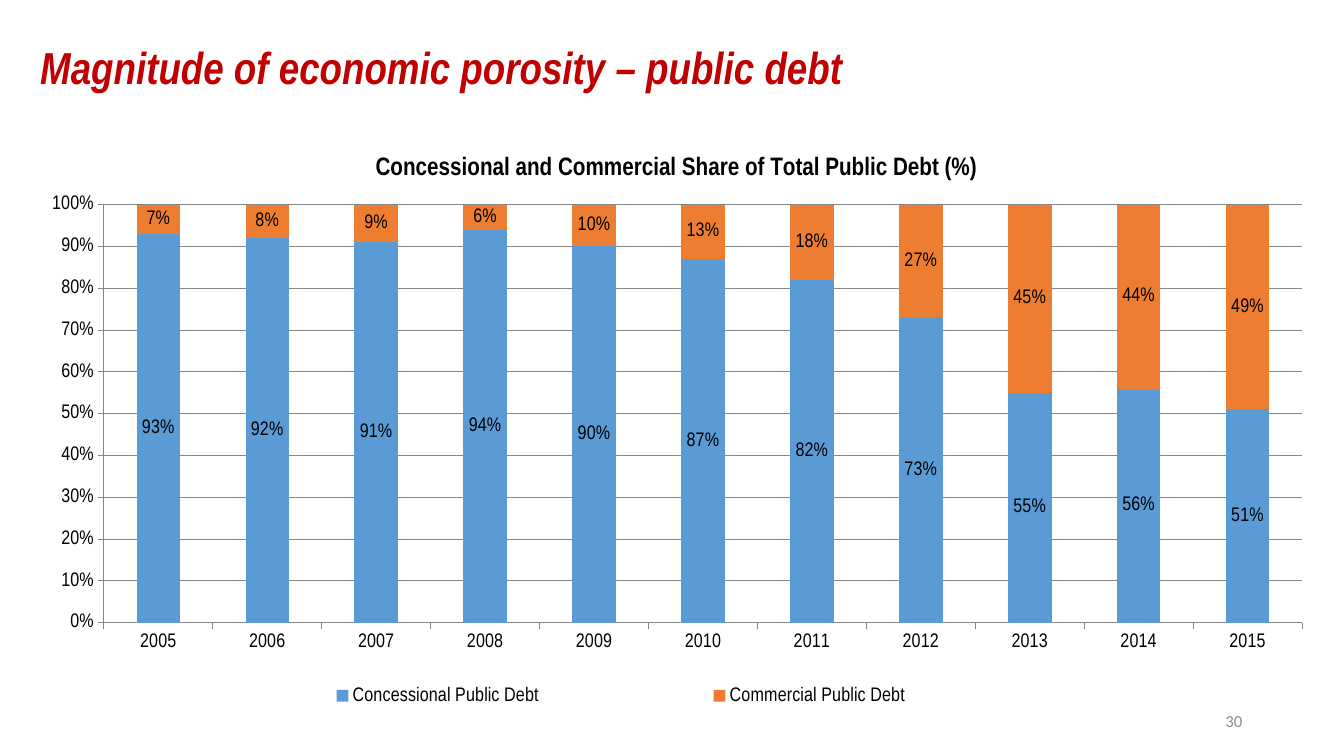
from dataclasses import dataclass

from lxml import etree
from pptx import Presentation
from pptx.chart.data import CategoryChartData
from pptx.dml.color import RGBColor
from pptx.enum.chart import XL_CHART_TYPE as ChartType, XL_LABEL_POSITION as LabelPosition
from pptx.enum.chart import XL_LEGEND_POSITION as LegendPosition, XL_TICK_MARK as TickMark
from pptx.enum.text import MSO_ANCHOR as Anchor, PP_ALIGN as Align
from pptx.oxml.ns import qn
from pptx.util import Inches, Pt


@dataclass(frozen=True)
class Theme:
    font: str = "Arial Narrow"
    number_font: str = "Calibri"
    heading: str = "C00000"
    ink: str = "000000"
    muted: str = "8C8C8C"
    rule: str = "868686"
    concessional: str = "5B9BD5"
    commercial: str = "ED7D31"
    heading_size: int = 32
    chart_title_size: int = 18
    chart_size: int = 14
    number_size: int = 12


THEME = Theme()

YEARS = [str(year) for year in range(2005, 2016)]
CONCESSIONAL_SHARES = [93, 92, 91, 94, 90, 87, 82, 73, 55, 56, 51]
DEBT_SHARES = {
    "Concessional Public Debt": (CONCESSIONAL_SHARES, THEME.concessional),
    "Commercial Public Debt": ([100 - share for share in CONCESSIONAL_SHARES], THEME.commercial),
}


def style_font(font, name, size, color, **formats):
    font.color.rgb = RGBColor.from_string(color)
    for attribute, value in {"name": name, "size": Pt(size), **formats}.items():
        setattr(font, attribute, value)


def add_text(slide, box, words, align=Align.LEFT, spacing=1.0, **font_style):
    """Place one line of text, centred vertically in its box."""
    frame = slide.shapes.add_textbox(*map(Inches, box)).text_frame
    frame.word_wrap = True
    frame.vertical_anchor = Anchor.MIDDLE
    line = frame.paragraphs[0]
    line.alignment = align
    line.line_spacing = spacing
    run = line.add_run()
    run.text = words
    style_font(run.font, **font_style)


def set_layout(parent, before, x, y, w, h, inner=False):
    """Fix a chart part at fractions of the chart area."""
    for old in parent.findall(qn("c:layout")):
        parent.remove(old)
    layout = etree.Element(qn("c:layout"))
    manual = etree.SubElement(layout, qn("c:manualLayout"))
    entries = {"xMode": "edge", "yMode": "edge", "x": x, "y": y, "w": w, "h": h}
    if inner:
        entries = {"layoutTarget": "inner", **entries}
    for tag, value in entries.items():
        etree.SubElement(manual, qn(f"c:{tag}")).set("val", str(value))
    parent.find(qn(before)).addprevious(layout)


def add_debt_chart(slide, box):
    data = CategoryChartData(number_format="0%")
    data.categories = YEARS
    for name, (shares, _) in DEBT_SHARES.items():
        data.add_series(name, [share / 100 for share in shares])
    chart = slide.shapes.add_chart(
        ChartType.COLUMN_STACKED_100, *map(Inches, box), data).chart
    style_font(chart.font, THEME.font, THEME.chart_size, THEME.ink)

    # Chart title
    chart.has_title = True
    chart.chart_title.include_in_layout = False
    heading = chart.chart_title.text_frame.paragraphs[0].add_run()
    heading.text = "Concessional and Commercial Share of Total Public Debt (%)"
    style_font(heading.font, THEME.font, THEME.chart_title_size, THEME.ink, bold=True)

    # Stacked columns
    plot = chart.plots[0]
    for attribute, value in {"gap_width": 150, "overlap": 100,
                             "vary_by_categories": False}.items():
        setattr(plot, attribute, value)
    for series, (_, color) in zip(plot.series, DEBT_SHARES.values()):
        series.format.fill.solid()
        series.format.fill.fore_color.rgb = RGBColor.from_string(color)
        labels = series.data_labels
        for attribute, value in {"show_value": True, "number_format": "0%",
                                 "number_format_is_linked": False,
                                 "position": LabelPosition.CENTER}.items():
            setattr(labels, attribute, value)
        style_font(labels.font, THEME.font, THEME.chart_size, THEME.ink)

    # Axes and gridlines
    years, percent = chart.category_axis, chart.value_axis
    for attribute, value in {"minimum_scale": 0, "maximum_scale": 1, "major_unit": 0.1,
                             "has_major_gridlines": True}.items():
        setattr(percent, attribute, value)
    percent.tick_labels.number_format = "0%"
    percent.tick_labels.number_format_is_linked = False
    for axis in (years, percent):
        axis.major_tick_mark = TickMark.OUTSIDE
    for rule in (years.format.line, percent.format.line, percent.major_gridlines.format.line):
        rule.color.rgb = RGBColor.from_string(THEME.rule)
        rule.width = Pt(0.75)

    # Legend and plot area
    chart.has_legend = True
    chart.legend.position = LegendPosition.BOTTOM
    chart.legend.include_in_layout = False
    plot_area = chart.element.find(".//" + qn("c:plotArea"))
    set_layout(plot_area, "c:barChart", 0.057, 0.118, 0.927, 0.689, inner=True)
    set_layout(chart.element.find(".//" + qn("c:legend")), "c:overlay", 0.107, 0.895, 0.7, 0.065)


def build_debt_slide(slide, left=0.3, width=12.82):
    add_text(slide, (left, 0.32, width, 0.75), "Magnitude of economic porosity – public debt",
             spacing=0.9, name=THEME.font, size=THEME.heading_size, color=THEME.heading,
             bold=True, italic=True)
    add_debt_chart(slide, (left, 1.32, width, 6.02))
    add_text(slide, (9.42, 6.95, 3, 0.4), "30", align=Align.RIGHT,
             name=THEME.number_font, size=THEME.number_size, color=THEME.muted)


def main():
    deck = Presentation()
    deck.slide_width, deck.slide_height = Inches(13.33), Inches(7.5)
    build_debt_slide(deck.slides.add_slide(deck.slide_layouts[6]))
    deck.save("out.pptx")


if __name__ == "__main__":
    main()
